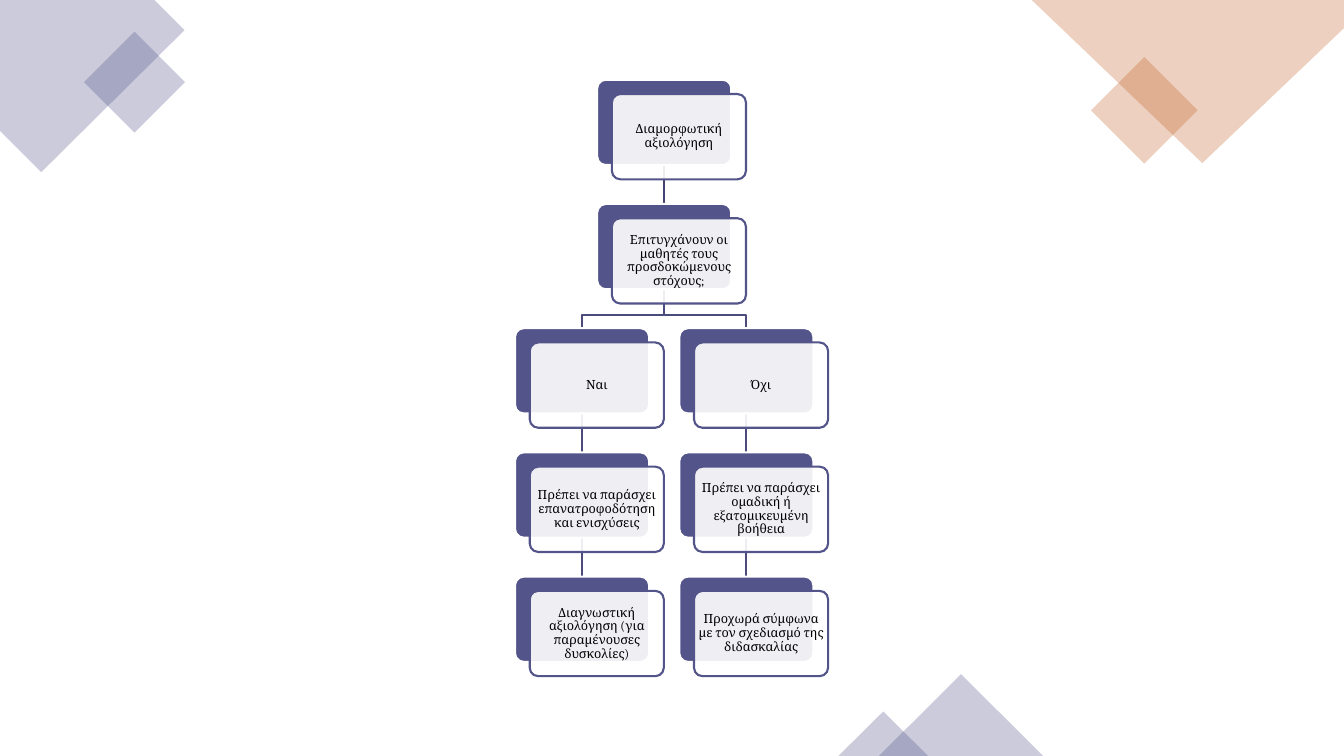
from lxml.etree import SubElement
from pptx import Presentation
from pptx.dml.color import RGBColor
from pptx.enum.shapes import MSO_CONNECTOR, MSO_SHAPE
from pptx.enum.text import MSO_ANCHOR, PP_ALIGN
from pptx.oxml.ns import qn
from pptx.util import Cm, Pt

INDIGO = RGBColor(0x53, 0x54, 0x8A)
BRANCH = RGBColor(0x4B, 0x4C, 0x7D)
TRUNK = RGBColor(0x42, 0x43, 0x6F)
ORANGE = RGBColor(0xC4, 0x65, 0x2D)
WHITE = RGBColor(0xFF, 0xFF, 0xFF)
BLACK = RGBColor(0, 0, 0)

# Steps: (column offset from the centre, row, text)
STEPS = [
    (0, 0, "Διαμορφωτική αξιολόγηση"),
    (0, 1, "Επιτυγχάνουν οι μαθητές τους προσδοκώμενους στόχους;"),
    (-0.5, 2, "Ναι"),
    (-0.5, 3, "Πρέπει να παράσχει επανατροφοδότηση και ενισχύσεις"),
    (-0.5, 4, "Διαγνωστική αξιολόγηση (για παραμένουσες δυσκολίες)"),
    (0.5, 2, "Όχι"),
    (0.5, 3, "Πρέπει να παράσχει ομαδική ή εξατομικευμένη βοήθεια"),
    (0.5, 4, "Προχωρά σύμφωνα με τον σχεδιασμό της διδασκαλίας"),
]
# Links: (column above, column below, row above, colour)
LINKS = [(0, 0, 0, TRUNK)]
for side in (-0.5, 0.5):
    LINKS += [(0, side, 1, BRANCH), (side, side, 2, BRANCH), (side, side, 3, BRANCH)]

# Corner decoration, in cm
CORNERS = [
    (INDIGO, [(3.89, 0), (0, 0), (0, 3.3), (1.04, 4.34), (4.65, 0.76)]),
    (ORANGE, [(26, 0), (33.87, 0), (33.87, 0.71), (30.3, 4.11)]),
]
TILTED_SQUARES = [(INDIGO, 2.49, 1.17, 1.8), (ORANGE, 27.89, 1.83, 1.9)]
TRIANGLES = [(22.15, 16.99, 4.14, 2.06), (21.13, 17.93, 2.26, 1.12)]

BOX_W, BOX_H = 3.38, 2.15
CENTRE_LEFT, FIRST_TOP = 15.05, 2.01
COLUMN_PITCH, ROW_PITCH = 4.14, 3.13
CARD_DX, CARD_DY = 0.37, 0.36
BEND = 0.66

prs = Presentation()
prs.slide_width, prs.slide_height = Cm(33.87), Cm(19.05)
slide = prs.slides.add_slide(prs.slide_layouts[6])
shapes = slide.shapes


def paint(shape, color, opacity=100, outline=None):
    shape.shadow.inherit = False
    shape.fill.solid()
    shape.fill.fore_color.rgb = color
    if opacity < 100:
        srgb = shape.fill._xPr.find(qn("a:solidFill"))[0]
        SubElement(srgb, qn("a:alpha"), val=str(opacity * 1000))
    if outline is None:
        shape.line.fill.background()
    else:
        shape.line.color.rgb = outline
        shape.line.width = Pt(1.5)


def polygon(points, close):
    points = [(Cm(x), Cm(y)) for x, y in points]
    builder = shapes.build_freeform(*points[0])
    builder.add_line_segments(points[1:], close=close)
    return builder.convert_to_shape()


def corner_of(column, row):
    return CENTRE_LEFT + column * COLUMN_PITCH, FIRST_TOP + row * ROW_PITCH


def add_box(x, y):
    box = shapes.add_shape(MSO_SHAPE.ROUNDED_RECTANGLE, Cm(x), Cm(y), Cm(BOX_W), Cm(BOX_H))
    box.adjustments[0] = 0.1
    return box


def add_link(above, below, row, color):
    x1, y1 = corner_of(above, row)
    x2, y2 = corner_of(below, row + 1)
    x1, x2, y1 = x1 + BOX_W / 2, x2 + BOX_W / 2, y1 + BOX_H
    if above == below:
        link = shapes.add_connector(MSO_CONNECTOR.STRAIGHT, Cm(x1), Cm(y1), Cm(x2), Cm(y2))
        SubElement(link._element.spPr, qn("a:effectLst"))
    else:
        link = polygon([(x1, y1), (x1, y1 + BEND), (x2, y1 + BEND), (x2, y2)], close=False)
        link.shadow.inherit = False
        link.fill.background()
    link.line.color.rgb = color
    link.line.width = Pt(1.5)


def add_step(column, row, text):
    x, y = corner_of(column, row)
    paint(add_box(x, y), INDIGO, outline=WHITE)
    card = add_box(x + CARD_DX, y + CARD_DY)
    paint(card, WHITE, opacity=90, outline=INDIGO)
    frame = card.text_frame
    frame.word_wrap = True
    frame.vertical_anchor = MSO_ANCHOR.MIDDLE
    frame.margin_left = frame.margin_right = Cm(0.04)
    frame.margin_top = frame.margin_bottom = Cm(0.04)
    label = frame.paragraphs[0]
    label.alignment = PP_ALIGN.CENTER
    label.line_spacing = 0.9
    run = label.add_run()
    run.text = text
    run.font.name, run.font.size = "Cambria", Pt(9)
    run.font.color.rgb = BLACK


for color, outline_points in CORNERS:
    paint(polygon(outline_points, close=True), color, opacity=30)
for color, left, top, size in TILTED_SQUARES:
    square = shapes.add_shape(MSO_SHAPE.RECTANGLE, Cm(left), Cm(top), Cm(size), Cm(size))
    square.rotation = 315
    paint(square, color, opacity=30)
for bounds in TRIANGLES:
    triangle = shapes.add_shape(MSO_SHAPE.ISOSCELES_TRIANGLE, *map(Cm, bounds))
    paint(triangle, INDIGO, opacity=30)

for link_ends in LINKS:
    add_link(*link_ends)
for step in STEPS:
    add_step(*step)

prs.save("out.pptx")
